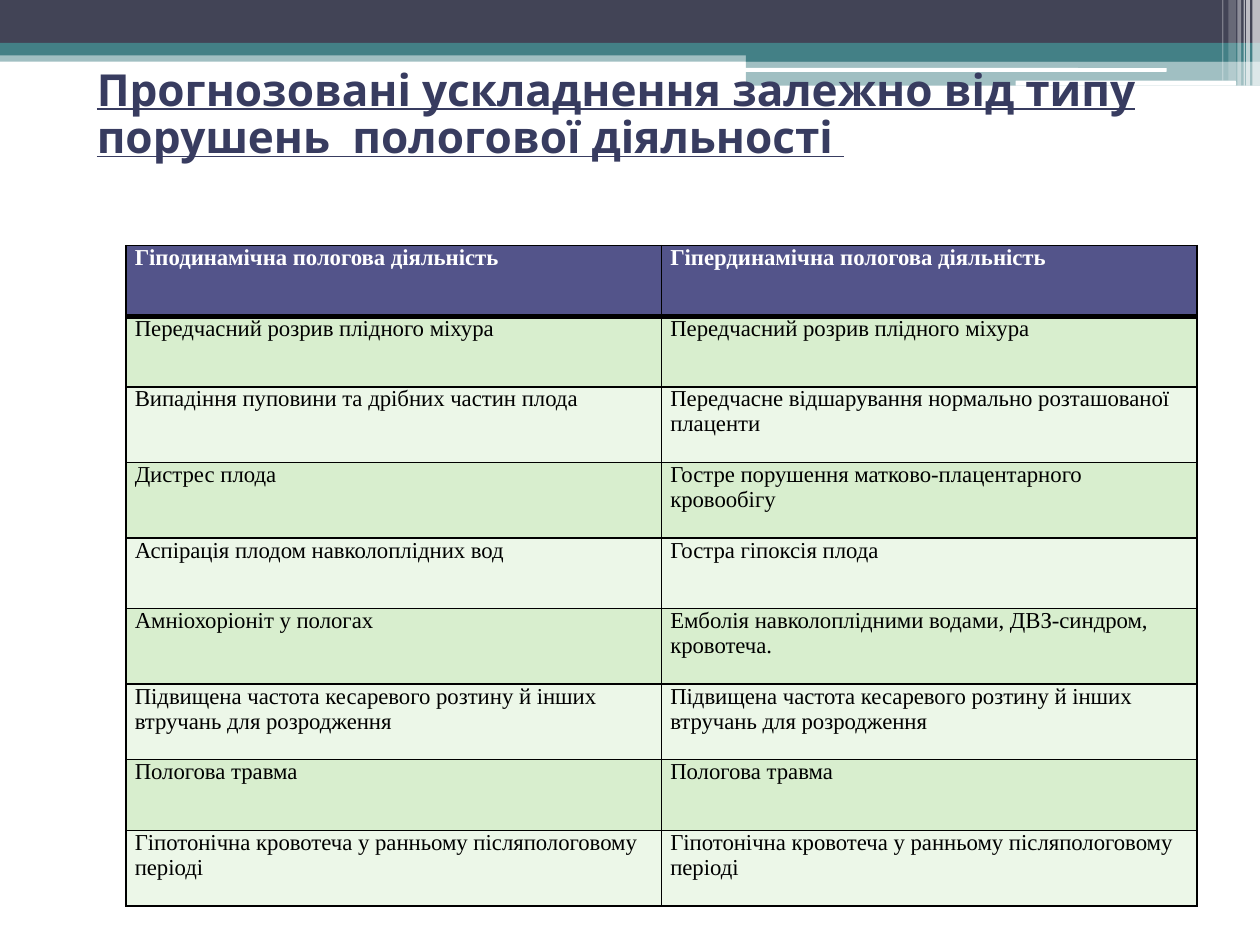
from lxml import etree
from pptx import Presentation
from pptx import util as u
from pptx.dml import color
from pptx.enum import shapes, text
from pptx.oxml import ns

PX = 9144
BLACK, WHITE, TEAL, SLATE = "000000", "FFFFFF", "438086", "424456"
HEADER, BANDS = "53548A", ("D8EECE", "ECF7E8")

BARS = [
    (0, 40, 1000, 9, TEAL, 50),
    (0, 0, 1000, 34, SLATE, 100),
    (0, 34, 1000, 10, TEAL, 100),
    (592, 39, 408, 10, TEAL, 100),
    (592, 48, 408, 20, TEAL, 50),
]
PILLS = [(591, 54, 335, 3), (806, 64, 175, 4)]
STRIPES = [
    (994, 6, 68, 65),
    (989, 3, 68, 65),
    (987, 1, 68, 60),
    (982, 3, 68, 40),
    (975, 6, 64, 20),
    (970, 1, 64, 30),
]

TITLE = "Прогнозовані ускладнення залежно від типу порушень  пологової діяльності "
ROW_HEIGHTS = [56, 56, 60, 60, 56, 60, 60, 56, 60]
ROWS = [
    ("Гіподинамічна пологова діяльність", "Гіпердинамічна пологова діяльність"),
    ("Передчасний розрив плідного міхура", "Передчасний розрив плідного міхура"),
    ("Випадіння пуповини та дрібних частин плода",
     "Передчасне відшарування нормально розташованої плаценти"),
    ("Дистрес плода", "Гостре порушення матково-плацентарного кровообігу"),
    ("Аспірація плодом навколоплідних вод", "Гостра гіпоксія плода"),
    ("Амніохоріоніт у пологах", "Емболія навколоплідними водами, ДВЗ-синдром, кровотеча."),
    ("Підвищена частота кесаревого розтину й інших втручань для розродження",
     "Підвищена частота кесаревого розтину й інших втручань для розродження"),
    ("Пологова травма", "Пологова травма"),
    ("Гіпотонічна кровотеча у ранньому післяпологовому періоді",
     "Гіпотонічна кровотеча у ранньому післяпологовому періоді"),
]


def px(*lengths):
    return [u.Emu(length * PX) for length in lengths]


def paint(target, value):
    target.solid()
    target.fore_color.rgb = color.RGBColor.from_string(value)


def add_span(para, words, font, size, value, bold=False, underline=False):
    span = para.add_run()
    span.text = words
    span.font.name = font
    span.font.size = u.Pt(size)
    span.font.bold = bold
    span.font.underline = underline
    paint(span.font.fill, value)


def add_block(page, box, value, opacity=100, kind=shapes.MSO_SHAPE.RECTANGLE):
    block = page.shapes.add_shape(kind, *px(*box))
    block.shadow.inherit = False
    block.line.fill.background()
    paint(block.fill, value)
    if opacity < 100:
        tint = block.fill._xPr.find(".//" + ns.qn("a:srgbClr"))
        etree.SubElement(tint, ns.qn("a:alpha"), val=str(opacity * 1000))
    return block


def add_banner(page, box):
    left, top = box[:2]
    for x, y, width, height, value, opacity in BARS:
        add_block(page, (left + x, top + y, width, height), value, opacity)
    for x, y, width, height in PILLS:
        pill = add_block(page, (left + x, top + y, width, height), WHITE,
                         kind=shapes.MSO_SHAPE.ROUNDED_RECTANGLE)
        pill.adjustments[0] = 0.17
    for x, width, height, opacity in STRIPES:
        add_block(page, (left + x, top, width, height), WHITE, opacity)


def add_title(page, box):
    frame = page.shapes.add_textbox(*px(*box)).text_frame
    frame.word_wrap = True
    frame.vertical_anchor = text.MSO_ANCHOR.MIDDLE
    frame.margin_left, frame.margin_right, frame.margin_top, frame.margin_bottom = px(10, 10, 5, 89)
    para = frame.paragraphs[0]
    para.line_spacing = 0.9
    add_span(para, TITLE, "Karla", 25.2, "383C60", bold=True, underline=True)


def add_borders(cell, widths):
    properties = cell._tc.get_or_add_tcPr()
    for side, points in zip("LRTB", widths):
        line = etree.SubElement(properties, ns.qn("a:ln" + side), w=str(u.Pt(points)))
        fill = etree.SubElement(line, ns.qn("a:solidFill"))
        etree.SubElement(fill, ns.qn("a:srgbClr"), val=BLACK)


def add_comparison(page, box):
    table = page.shapes.add_table(len(ROWS), 2, *px(*box)).table
    table.first_row = table.horz_banding = False
    for column in table.columns:
        column.width = px(box[2] // 2)[0]
    for index, (height, words) in enumerate(zip(ROW_HEIGHTS, ROWS)):
        table.rows[index].height = px(height)[0]
        heading = index == 0
        for cell, phrase in zip(table.rows[index].cells, words):
            cell.margin_left, cell.margin_right, cell.margin_top, cell.margin_bottom = px(7, 7, 0, 0)
            add_borders(cell, (1, 1, 3 if index == 1 else 1, 3 if heading else 1))
            paint(cell.fill, HEADER if heading else BANDS[(index - 1) % 2])
            add_span(cell.text_frame.paragraphs[0], phrase, "Times New Roman", 13,
                     WHITE if heading else BLACK, bold=heading)


def main():
    deck = Presentation()
    deck.slide_width, deck.slide_height = px(1000, 750)
    page = deck.slides.add_slide(deck.slide_layouts[6])
    paint(page.background.fill, WHITE)
    add_banner(page, (0, 0, 1000, 68))
    add_title(page, (67, 84, 900, 100))
    add_comparison(page, (100, 195, 850, sum(ROW_HEIGHTS)))
    deck.save("out.pptx")


if __name__ == "__main__":
    main()
